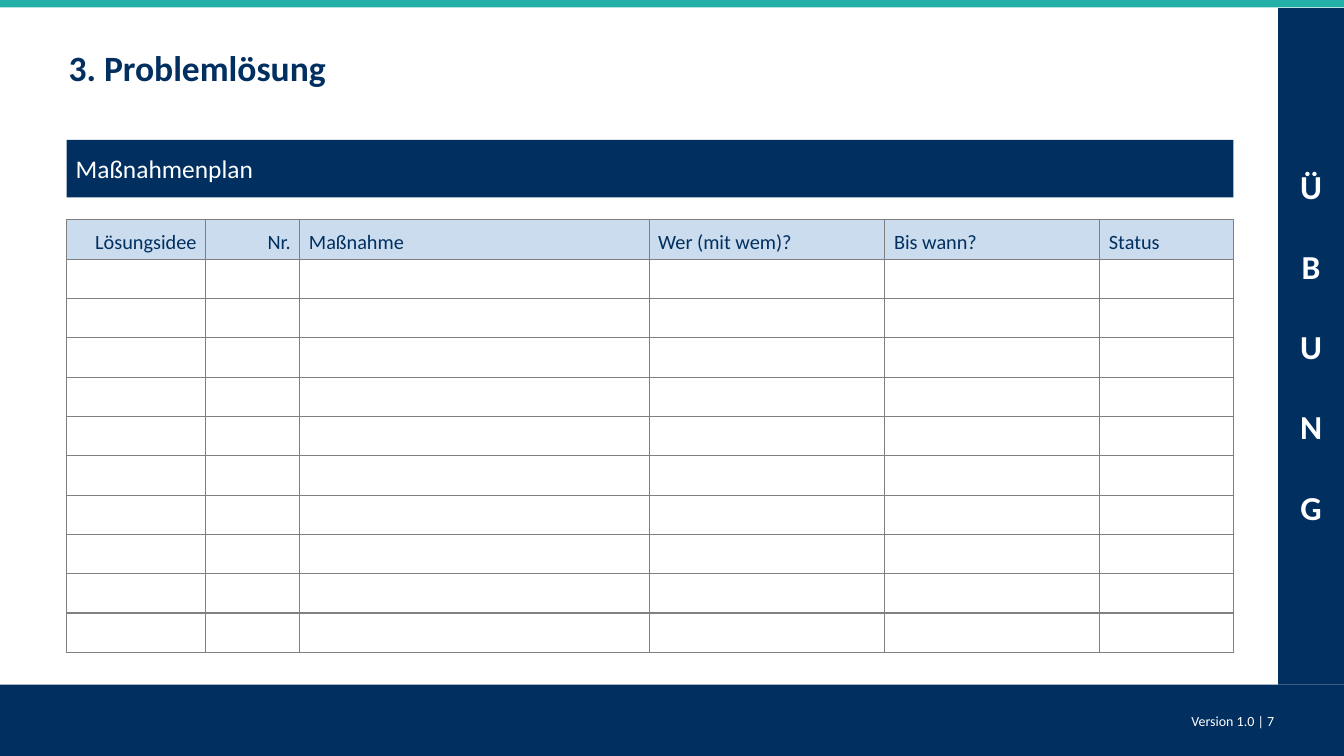
from dataclasses import dataclass

from lxml.etree import SubElement
from pptx import Presentation
from pptx.dml.color import RGBColor
from pptx.enum.shapes import MSO_SHAPE
from pptx.enum.text import MSO_ANCHOR, PP_ALIGN
from pptx.oxml.ns import qn
from pptx.shapes.autoshape import Shape
from pptx.slide import Slide
from pptx.table import _Cell
from pptx.text.text import TextFrame
from pptx.util import Inches, Pt

NAVY = RGBColor(0x00, 0x2F, 0x60)
TEAL = RGBColor(0x23, 0xB0, 0xA8)
LIGHT_BLUE = RGBColor(0xCA, 0xDC, 0xEE)
GRAY = RGBColor(0x80, 0x80, 0x80)
WHITE = RGBColor(0xFF, 0xFF, 0xFF)

FONT = "Calibri"
WIDTH, HEIGHT = 14.7, 8.27
TABLE_LEFT, TABLE_WIDTH = 0.73, 12.76
ROW_COUNT, ROW_HEIGHT = 11, 0.43


@dataclass(frozen=True)
class Box:
    left: float
    top: float
    width: float
    height: float


@dataclass(frozen=True)
class Bar:
    box: Box
    color: RGBColor
    text: str = ""
    size: float = 20
    bold: bool = False
    align: PP_ALIGN = PP_ALIGN.LEFT
    spacing: float = 0


@dataclass(frozen=True)
class Column:
    heading: str
    width: float
    align: PP_ALIGN = PP_ALIGN.LEFT


BARS = [
    Bar(Box(0, 0, WIDTH, 0.08), TEAL),
    Bar(Box(0, 7.49, WIDTH, 0.78), NAVY),
    Bar(Box(13.98, 0.09, 0.72, 7.4), NAVY, "Ü\nB\nU\nN\nG", 26.4, True,
        PP_ALIGN.CENTER, 31.4),
    Bar(Box(TABLE_LEFT, 1.53, TABLE_WIDTH, 0.63), NAVY, "Maßnahmenplan"),
]

COLUMNS = [
    Column("Lösungsidee", 1.52, PP_ALIGN.RIGHT),
    Column("Nr.", 1.03, PP_ALIGN.RIGHT),
    Column("Maßnahme", 3.82),
    Column("Wer (mit wem)?", 2.58),
    Column("Bis wann?", 2.35),
    Column("Status", 1.46),
]


def place(shape: Shape, box: Box) -> None:
    shape.left, shape.top = Inches(box.left), Inches(box.top)
    shape.width, shape.height = Inches(box.width), Inches(box.height)


def write(frame: TextFrame, text: str, size: float, color: RGBColor,
          bold: bool = False, align: PP_ALIGN = PP_ALIGN.LEFT,
          spacing: float = 0) -> None:
    frame.text = text
    for index, paragraph in enumerate(frame.paragraphs):
        paragraph.alignment = align
        if index and spacing:
            paragraph.space_before = Pt(spacing)
        for run in paragraph.runs:
            run.font.name = FONT
            run.font.size = Pt(size)
            run.font.bold = bold
            run.font.color.rgb = color


def remove_margins(frame: TextFrame) -> None:
    frame.margin_left = frame.margin_right = 0
    frame.margin_top = frame.margin_bottom = 0


def add_bar(slide: Slide, bar: Bar) -> None:
    box = bar.box
    shape = slide.shapes.add_shape(
        MSO_SHAPE.RECTANGLE, Inches(box.left), Inches(box.top),
        Inches(box.width), Inches(box.height))
    shape.shadow.inherit = False
    shape.fill.solid()
    shape.fill.fore_color.rgb = bar.color
    shape.line.fill.background()
    if bar.text:
        shape.text_frame.vertical_anchor = MSO_ANCHOR.MIDDLE
        write(shape.text_frame, bar.text, bar.size, WHITE, bar.bold,
              bar.align, bar.spacing)


def add_title(slide: Slide) -> None:
    title = slide.shapes.title
    place(title, Box(0.75, -0.01, 13.23, 1.5))
    remove_margins(title.text_frame)
    title.text_frame.vertical_anchor = MSO_ANCHOR.MIDDLE
    write(title.text_frame, "3. Problemlösung", 28, NAVY, True)


def add_footer(slide: Slide) -> None:
    footer = slide.shapes.add_textbox(
        Inches(12.87), Inches(7.79), Inches(1.07), Inches(0.19))
    remove_margins(footer.text_frame)
    footer.text_frame.word_wrap = False
    write(footer.text_frame, "Version 1.0 | 7", 11, WHITE,
          align=PP_ALIGN.RIGHT)


def style_cell(cell: _Cell, fill: RGBColor) -> None:
    properties = cell._tc.get_or_add_tcPr()
    for side in ("a:lnL", "a:lnR", "a:lnT", "a:lnB"):
        line = SubElement(properties, qn(side), w=str(Pt(1)))
        solid = SubElement(line, qn("a:solidFill"))
        SubElement(solid, qn("a:srgbClr"), val=str(GRAY))
    cell.fill.solid()
    cell.fill.fore_color.rgb = fill


def add_action_table(slide: Slide) -> None:
    table = slide.shapes.add_table(
        ROW_COUNT, len(COLUMNS), Inches(TABLE_LEFT), Inches(2.4),
        Inches(TABLE_WIDTH), Inches(ROW_COUNT * ROW_HEIGHT)).table
    table.horz_banding = False
    for row in table.rows:
        row.height = Inches(ROW_HEIGHT)
        for cell in row.cells:
            style_cell(cell, WHITE)
    for index, column in enumerate(COLUMNS):
        table.columns[index].width = Inches(column.width)
        cell = table.cell(0, index)
        cell.fill.fore_color.rgb = LIGHT_BLUE
        cell.margin_top = Inches(0.12)
        write(cell.text_frame, column.heading, 16, NAVY, align=column.align)


def main() -> None:
    presentation = Presentation()
    presentation.slide_width = Inches(WIDTH)
    presentation.slide_height = Inches(HEIGHT)
    slide = presentation.slides.add_slide(presentation.slide_layouts[5])
    add_title(slide)
    for bar in BARS:
        add_bar(slide, bar)
    add_footer(slide)
    add_action_table(slide)
    presentation.save("out.pptx")


if __name__ == "__main__":
    main()
